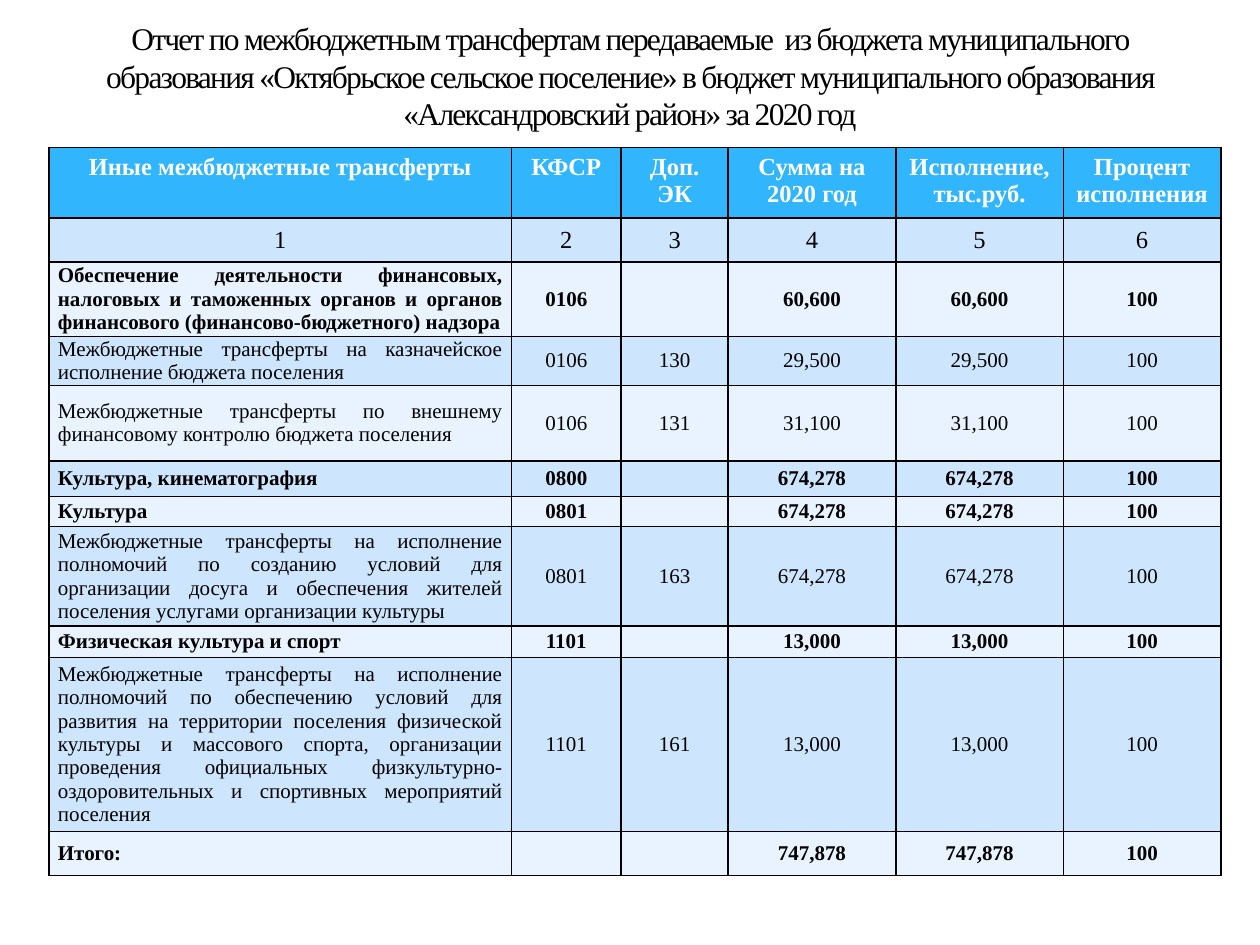
from lxml.etree import SubElement
from pptx import Presentation
from pptx.dml.color import RGBColor
from pptx.enum.text import MSO_ANCHOR as Anchor, PP_ALIGN as Align
from pptx.oxml import parse_xml
from pptx.oxml.ns import nsdecls, qn
from pptx.util import Inches, Pt

FONT = "Times New Roman"
HEADER_FILL, BAND_FILLS = "31B6FD", ("CEE5FE", "E8F3FF")
TITLE = (
    "Отчет по межбюджетным трансфертам передаваемые  из бюджета муниципального "
    "образования «Октябрьское сельское поселение» в бюджет муниципального "
    "образования «Александровский район» за 2020 год"
)
COLUMNS = [
    ("Иные межбюджетные трансферты", 3.67),
    ("КФСР", 0.87),
    ("Доп. ЭК", 0.85),
    ("Сумма на 2020 год", 1.33),
    ("Исполнение, тыс.руб.", 1.33),
    ("Процент исполнения", 1.25),
]
HEADER_HEIGHT, NUMBERS_HEIGHT = 0.56, 0.35
TRANSFERS = [
    ("Обеспечение деятельности финансовых, налоговых и таможенных органов и органов "
     "финансового (финансово-бюджетного) надзора", "0106", "", "60,600", 0.59),
    ("Межбюджетные трансферты на казначейское исполнение бюджета поселения",
     "0106", "130", "29,500", 0.39),
    ("Межбюджетные трансферты по внешнему финансовому контролю бюджета поселения",
     "0106", "131", "31,100", 0.6),
    ("Культура, кинематография", "0800", "", "674,278", 0.28),
    ("Культура", "0801", "", "674,278", 0.24),
    ("Межбюджетные трансферты на исполнение полномочий по созданию условий для "
     "организации досуга и обеспечения жителей поселения услугами организации культуры",
     "0801", "163", "674,278", 0.79),
    ("Физическая культура и спорт", "1101", "", "13,000", 0.25),
    ("Межбюджетные трансферты на исполнение полномочий по обеспечению условий для "
     "развития на территории поселения физической культуры и массового спорта, "
     "организации проведения официальных физкультурно-оздоровительных и спортивных "
     "мероприятий поселения", "1101", "161", "13,000", 1.38),
    ("Итого:", "", "", "747,878", 0.35),
]


def rgb(value):
    return RGBColor.from_string(value)


def format_runs(paragraph, size, color="000000", bold=False):
    for run in paragraph.runs:
        run.font.name = FONT
        run.font.size = Pt(size)
        run.font.bold = bold
        run.font.color.rgb = rgb(color)


def add_borders(cell):
    properties = cell._tc.get_or_add_tcPr()
    for position, side in enumerate(("lnL", "lnR", "lnT", "lnB")):
        properties.insert(position, parse_xml(
            f'<a:{side} {nsdecls("a")} w="12700"><a:solidFill>'
            f'<a:srgbClr val="000000"/></a:solidFill></a:{side}>'))


def fill_cell(cell, text, fill, size, color="000000", bold=False, align=Align.CENTER):
    cell.text = text
    cell.fill.solid()
    cell.fill.fore_color.rgb = rgb(fill)
    paragraph = cell.text_frame.paragraphs[0]
    paragraph.alignment = align
    format_runs(paragraph, size, color, bold)
    if not text:
        SubElement(paragraph._p, qn("a:endParaRPr")).set("sz", str(size * 100))
    add_borders(cell)


def add_title(slide):
    title = slide.shapes.title
    title.left, title.top = Inches(0.5), Inches(0.17)
    title.width, title.height = Inches(9), Inches(0.93)
    frame = title.text_frame
    frame.text = TITLE
    frame.word_wrap = True
    frame.vertical_anchor = Anchor.BOTTOM
    paragraph = frame.paragraphs[0]
    paragraph.alignment = Align.CENTER
    format_runs(paragraph, 18)
    properties = paragraph.runs[0].font._element
    properties.set("spc", "-100")
    properties.insert(0, parse_xml(
        f'<a:ln {nsdecls("a")} w="3175"><a:solidFill><a:srgbClr val="AFCCDE">'
        '<a:alpha val="25000"/></a:srgbClr></a:solidFill></a:ln>'))


def add_report(slide):
    heights = [HEADER_HEIGHT, NUMBERS_HEIGHT] + [item[-1] for item in TRANSFERS]
    widths = [width for _, width in COLUMNS]
    table = slide.shapes.add_table(
        len(heights), len(widths), Inches(0.39), Inches(1.17),
        Inches(sum(widths)), Inches(sum(heights))).table
    for column, width in zip(table.columns, widths):
        column.width = Inches(width)
    for row, height in zip(table.rows, heights):
        row.height = Inches(height)

    for index, (heading, _) in enumerate(COLUMNS):
        fill_cell(table.cell(0, index), heading, HEADER_FILL, 14, "FFFFFF", True)
        number = table.cell(1, index)
        fill_cell(number, str(index + 1), BAND_FILLS[0], 14)
        number.vertical_anchor = Anchor.MIDDLE

    for row, (name, code, extra, amount, _) in enumerate(TRANSFERS, 2):
        for index, text in enumerate((name, code, extra, amount, amount, "100")):
            cell = table.cell(row, index)
            fill_cell(cell, text, BAND_FILLS[(row - 1) % 2], 12, bold=not extra,
                      align=Align.CENTER if index else Align.JUSTIFY)
            cell.vertical_anchor = Anchor.MIDDLE
            cell.margin_left = cell.margin_right = Inches(0.07)
            cell.margin_top = cell.margin_bottom = 0


def main():
    presentation = Presentation()
    presentation.slide_width, presentation.slide_height = Inches(10), Inches(7.5)
    slide = presentation.slides.add_slide(presentation.slide_layouts[5])
    add_title(slide)
    add_report(slide)
    presentation.save("out.pptx")


if __name__ == "__main__":
    main()
